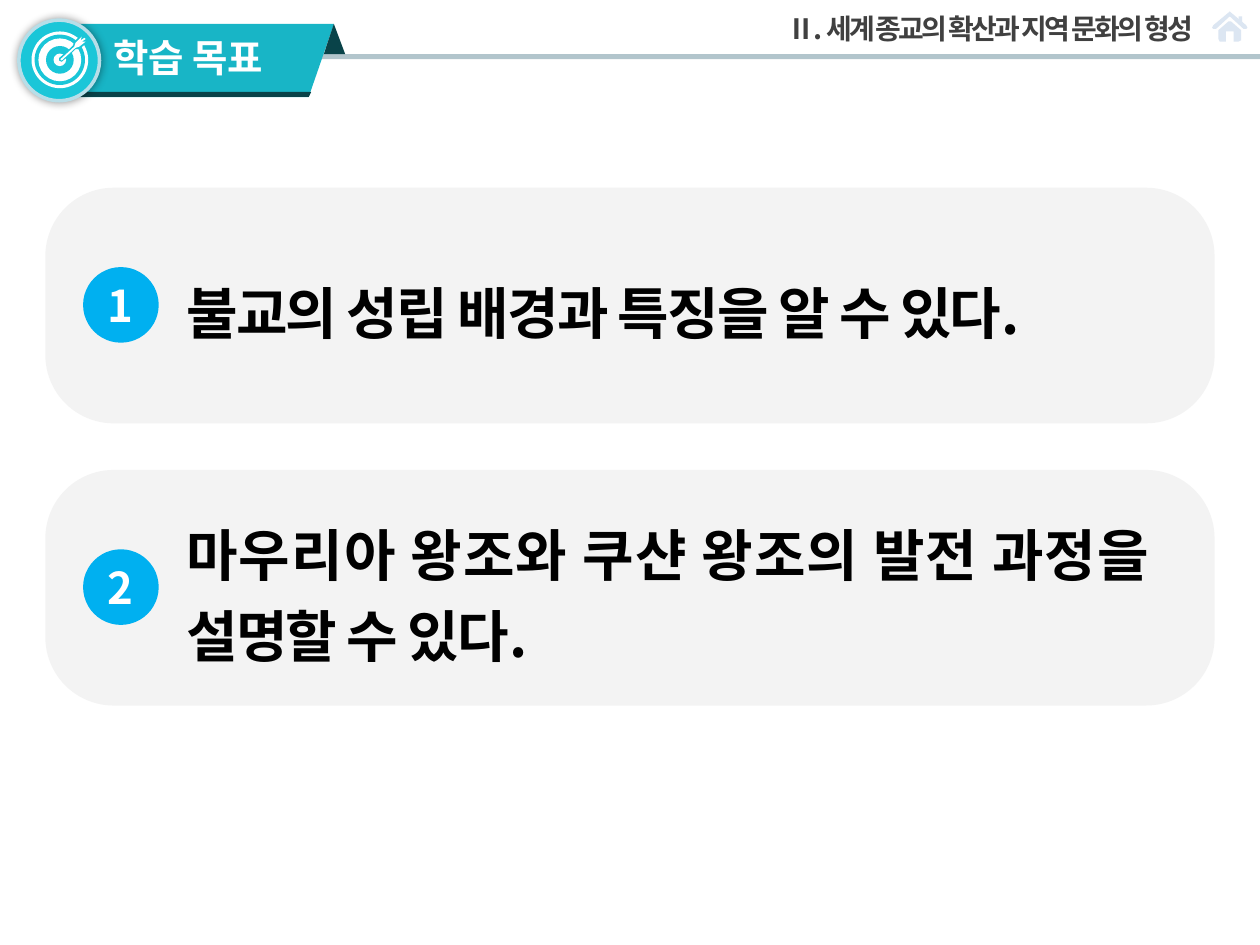
from typing import NamedTuple

from lxml.etree import SubElement as Sub
from pptx import Presentation
from pptx.dml.color import RGBColor
from pptx.enum.shapes import MSO_SHAPE as Kind
from pptx.enum.text import MSO_ANCHOR as Anchor, PP_ALIGN as Align
from pptx.oxml.ns import qn
from pptx.util import Inches, Pt

FONT = "Noto Sans CJK KR"
TEAL, DARK, AQUA = "18B5C6", "094349", "1AC6D8"
WHITE, PALE = "FFFFFF", "DCE6F2"


class Box(NamedTuple):
    x: float
    y: float
    w: float
    h: float

    def emu(self) -> list:
        return [Inches(v) for v in self]


class Goal(NamedTuple):
    mark: str
    text: str


class Ring(NamedTuple):
    size: float
    tint: str


class Form(NamedTuple):
    tint: str
    points: list


GOALS = [
    Goal("1", "불교의 성립 배경과 특징을 알 수 있다."),
    Goal("2", "마우리아 왕조와 쿠샨 왕조의 발전 과정을 설명할 수 있다."),
]
RINGS = [Ring(0.45, WHITE), Ring(0.4, AQUA), Ring(0.34, WHITE),
         Ring(0.22, AQUA), Ring(0.1, WHITE)]
HOUSE = [
    Form(PALE, [(9.88, 0.23), (9.87, 0.23), (9.76, 0.13), (9.65, 0.23),
                (9.63, 0.23), (9.62, 0.22), (9.63, 0.2), (9.75, 0.1),
                (9.76, 0.09), (9.77, 0.1), (9.89, 0.2), (9.9, 0.22),
                (9.89, 0.23)]),
    Form(PALE, [(9.85, 0.25), (9.85, 0.24), (9.77, 0.17), (9.75, 0.17),
                (9.67, 0.24), (9.67, 0.31), (9.68, 0.33), (9.73, 0.33),
                (9.73, 0.25), (9.79, 0.25), (9.79, 0.33), (9.83, 0.33),
                (9.85, 0.32)]),
]
RIBBON = [
    Form(TEAL, [(0.53, 0.19), (2.65, 0.19), (2.45, 0.77), (0.53, 0.77)]),
    Form(DARK, [(0.53, 0.73), (2.47, 0.73), (2.45, 0.77), (0.53, 0.77)]),
    Form(DARK, [(2.65, 0.19), (2.74, 0.43), (2.57, 0.43)]),
]
DART = [
    Form(AQUA, [(0.65, 0.27), (0.64, 0.28), (0.59, 0.33), (0.58, 0.36),
                (0.53, 0.41), (0.47, 0.46), (0.47, 0.48), (0.49, 0.49),
                (0.55, 0.44), (0.6, 0.39), (0.63, 0.39), (0.69, 0.34),
                (0.7, 0.33), (0.69, 0.32), (0.69, 0.3), (0.68, 0.29),
                (0.66, 0.29), (0.66, 0.28)]),
    Form(WHITE, [(0.65, 0.29), (0.64, 0.32), (0.67, 0.3), (0.68, 0.31),
                 (0.65, 0.33), (0.68, 0.33), (0.63, 0.37), (0.6, 0.38),
                 (0.49, 0.48), (0.48, 0.47), (0.59, 0.37), (0.6, 0.34)]),
]


def hue(code: str) -> RGBColor:
    return RGBColor.from_string(code)


def paint(shape, tint: str):
    """Give a flat fill with no line and no shadow."""
    shape.shadow.inherit = False
    shape.fill.solid()
    shape.fill.fore_color.rgb = hue(tint)
    shape.line.fill.background()
    return shape


def draw(slide, kind: Kind, box: Box, tint: str):
    return paint(slide.shapes.add_shape(kind, *box.emu()), tint)


def trace(slide, form: Form) -> None:
    """Draw a closed outline through the points of a form."""
    first, *rest = [(Inches(x), Inches(y)) for x, y in form.points]
    pen = slide.shapes.build_freeform(*first)
    pen.add_line_segments(rest, close=True)
    paint(pen.convert_to_shape(), form.tint)


def glow(shape, blur: float, alpha: int) -> None:
    """Add a soft black shadow on all sides."""
    list_ = shape._element.spPr.find(qn("a:effectLst"))
    soft = Sub(list_, qn("a:outerShdw"), blurRad=str(Pt(blur)), dist="0",
               dir="0", algn="ctr", rotWithShape="0")
    black = Sub(soft, qn("a:srgbClr"), val="000000")
    Sub(black, qn("a:alpha"), val=str(alpha * 1000))


def write(shape, text: str, *, size: float, tint: str, align=Align.LEFT,
          lead: float = 1.0, track: float = 0, pad=(0, 0, 0, 0)) -> None:
    frame = shape.text_frame
    frame.word_wrap = True
    frame.vertical_anchor = Anchor.MIDDLE
    (frame.margin_left, frame.margin_top,
     frame.margin_right, frame.margin_bottom) = [Inches(v) for v in pad]
    para = frame.paragraphs[0]
    para.alignment, para.line_spacing = align, lead
    run = para.add_run()
    run.text = text
    font = run.font
    font.size, font.bold, font.name = Pt(size), True, FONT
    font.color.rgb = hue(tint)
    props = run._r.get_or_add_rPr()
    Sub(props, qn("a:ea"), typeface=FONT)
    if track:
        props.set("spc", str(round(track * 100)))


def label(slide, box: Box, text: str, **style) -> None:
    write(slide.shapes.add_textbox(*box.emu()), text, **style)


def header(slide) -> None:
    label(slide, Box(5.86, 0, 3.69, 0.42),
          "Ⅱ. 세계 종교의 확산과 지역 문화의 형성", size=16, tint="404040",
          align=Align.RIGHT, lead=1.1, track=-1.5, pad=(0, 0, 0.08, 0))
    for form in HOUSE:
        trace(slide, form)
    draw(slide, Kind.RECTANGLE, Box(9.83, 0.13, 0.03, 0.06), PALE)
    draw(slide, Kind.RECTANGLE, Box(0.39, 0.43, 9.61, 0.04), "B2C5CC")
    for form in RIBBON:
        trace(slide, form)
    label(slide, Box(0.8, 0.22, 1.66, 0.47), "학습 목표", size=22,
          tint=WHITE, pad=(0.1, 0, 0.1, 0))


def target(slide) -> None:
    disc = draw(slide, Kind.OVAL, Box(0.15, 0.16, 0.64, 0.64), AQUA)
    disc.line.color.rgb = hue("B7DEE8")
    disc.line.width = Pt(2)
    glow(disc, 5, 40)
    for ring in RINGS:
        edge = 0.475 - ring.size / 2
        draw(slide, Kind.OVAL, Box(edge, edge, ring.size, ring.size),
             ring.tint)
    for form in DART:
        trace(slide, form)


def card(slide, top: float, goal: Goal) -> None:
    panel = draw(slide, Kind.ROUNDED_RECTANGLE, Box(0.36, top, 9.28, 1.87),
                 "F3F3F3")
    panel.adjustments[0] = 0.29
    label(slide, Box(1.38, top + 0.25, 7.83, 1.37), goal.text, size=32,
          tint="000000", align=Align.JUSTIFY, lead=1.2, track=-1,
          pad=(0.1, 0.05, 0.1, 0.05))
    disc = draw(slide, Kind.OVAL, Box(0.66, top + 0.63, 0.6, 0.6), "00B0F0")
    write(disc, goal.mark, size=25, tint=WHITE, align=Align.CENTER,
          track=-1.5)


def main() -> None:
    deck = Presentation()
    deck.slide_width, deck.slide_height = Inches(10), Inches(7.5)
    slide = deck.slides.add_slide(deck.slide_layouts[6])
    header(slide)
    target(slide)
    for i, goal in enumerate(GOALS):
        card(slide, 1.49 + i * 2.24, goal)
    deck.save("out.pptx")


if __name__ == "__main__":
    main()
